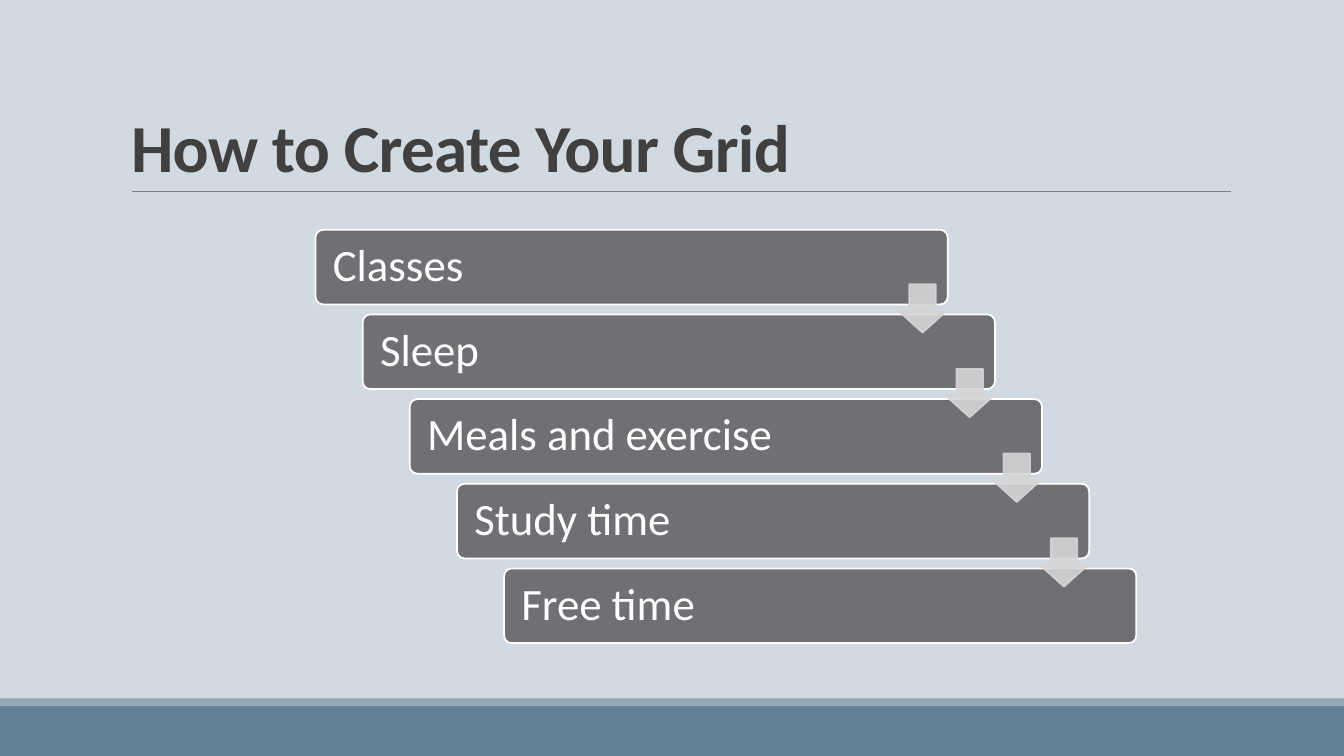
from dataclasses import dataclass

from lxml.etree import SubElement
from pptx import Presentation
from pptx.dml.color import RGBColor as RGB
from pptx.enum.shapes import MSO_CONNECTOR as CONN, MSO_SHAPE as SHAPE
from pptx.enum.text import MSO_ANCHOR as ANCHOR, MSO_AUTO_SIZE as AUTO, PP_ALIGN as ALIGN
from pptx.oxml.ns import qn
from pptx.util import Inches, Pt


@dataclass(frozen=True)
class Theme:
    font: str = "Calibri"
    background: RGB = RGB(0xD1, 0xD9, 0xE1)
    band: RGB = RGB(0x61, 0x81, 0x97)
    stripe: RGB = RGB(0x92, 0xA9, 0xB9)
    rule: RGB = RGB(0x80, 0x80, 0x80)
    title: RGB = RGB(0x40, 0x40, 0x40)
    bar: RGB = RGB(0x6F, 0x6F, 0x74)
    white: RGB = RGB(0xFF, 0xFF, 0xFF)
    arrow: RGB = RGB(0xD5, 0xD5, 0xD6)
    title_size: int = 48
    step_size: int = 32


THEME = Theme()
STEPS = ["Classes", "Sleep", "Meals and exercise\u00a0", "Study time\u00a0", "Free time"]


def add_block(s, kind, box, fill, line=None):
    sp = s.shapes.add_shape(kind, *map(Inches, box))
    sp.shadow.inherit = False
    sp.fill.solid()
    sp.fill.fore_color.rgb = fill
    if line is None:
        sp.line.fill.background()
    else:
        sp.line.color.rgb = line
        sp.line.width = Pt(1.25)
    return sp


def add_text(tf, text, size, color, spacing, bold=False):
    tf.word_wrap = True
    tf.auto_size = AUTO.NONE
    p = tf.paragraphs[0]
    p.alignment = ALIGN.LEFT
    p.line_spacing = spacing
    r = p.add_run()
    r.text = text
    r.font.name = THEME.font
    r.font.size = Pt(size)
    r.font.bold = bold
    r.font.color.rgb = color
    return r


def add_footer(s, box):
    left, top, width, height = box
    stripe = 0.07
    add_block(s, SHAPE.RECTANGLE, (left, top + stripe, width, height - stripe), THEME.band)
    add_block(s, SHAPE.RECTANGLE, (left, top, width, stripe), THEME.stripe)


def add_title(s, box):
    left, top, width, height = box
    title = s.shapes.title
    title.left, title.top, title.width, title.height = map(Inches, box)
    title.text_frame.vertical_anchor = ANCHOR.BOTTOM
    r = add_text(title.text_frame, "How to Create Your Grid",
                 THEME.title_size, THEME.title, 0.85, bold=True)
    r.font._element.set("spc", "-50")
    bottom = top + height
    rule = s.shapes.add_connector(CONN.STRAIGHT, *map(
        Inches, (left + 0.11, bottom, left + width + 0.01, bottom)))
    rule.line.color.rgb = THEME.rule
    rule.line.width = Pt(0.5)
    SubElement(rule._element.spPr, qn("a:effectLst"))


def add_bar(s, box, text):
    bar = add_block(s, SHAPE.ROUNDED_RECTANGLE, box, THEME.bar, THEME.white)
    bar.adjustments[0] = 0.1
    tf = bar.text_frame
    tf.margin_left = tf.margin_right = Inches(0.15)
    tf.vertical_anchor = ANCHOR.MIDDLE
    add_text(tf, text, THEME.step_size, THEME.white, 0.9)


def add_arrow(s, box):
    arrow = add_block(s, SHAPE.DOWN_ARROW, box, THEME.arrow, THEME.arrow)
    arrow.adjustments[0] = 0.55
    arrow.adjustments[1] = 0.45
    for color in arrow._element.spPr.iter(qn("a:srgbClr")):
        SubElement(color, qn("a:alpha"), val="90000")


def add_staircase(s, box, steps):
    left, top, width, height = box
    bar_width, bar_height, arrow = 6.27, 0.74, 0.48
    dx = (width - bar_width) / (len(steps) - 1)
    dy = (height - bar_height) / (len(steps) - 1)
    for i, text in enumerate(steps):
        add_bar(s, (left + i * dx, top + i * dy, bar_width, bar_height), text)
    for i in range(len(steps) - 1):
        add_arrow(s, (left + i * dx + bar_width - arrow - 0.01,
                      top + i * dy + 0.54, arrow, arrow))


def main():
    prs = Presentation()
    prs.slide_width, prs.slide_height = Inches(13.33), Inches(7.5)
    s = prs.slides.add_slide(prs.slide_layouts[5])
    s.background.fill.solid()
    s.background.fill.fore_color.rgb = THEME.background
    add_footer(s, (0, 6.93, 13.33, 0.57))
    add_title(s, (1.2, 0.31, 11, 1.59))
    add_staircase(s, (3.13, 2.28, 8.14, 4.1), STEPS)
    prs.save("out.pptx")


if __name__ == "__main__":
    main()
